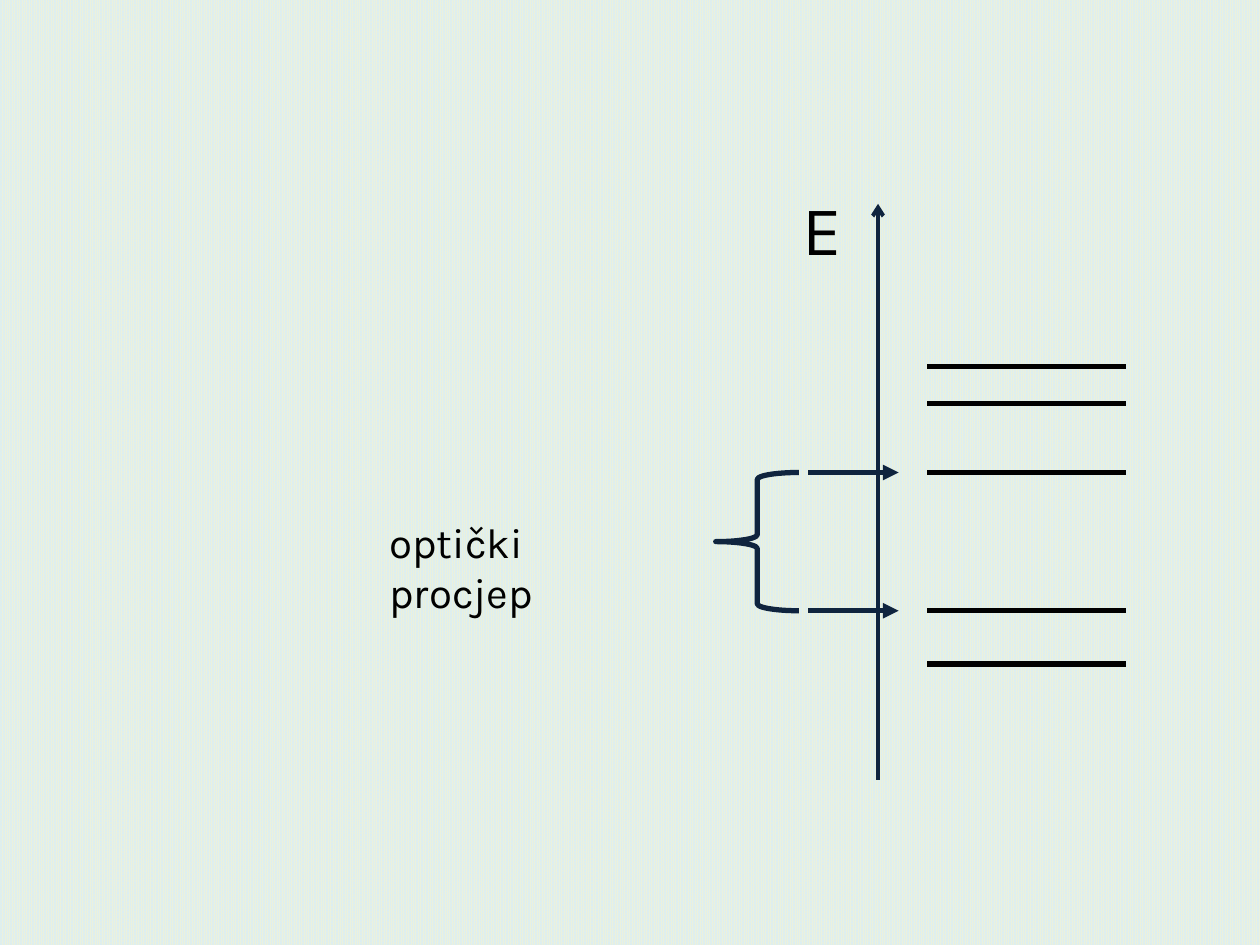
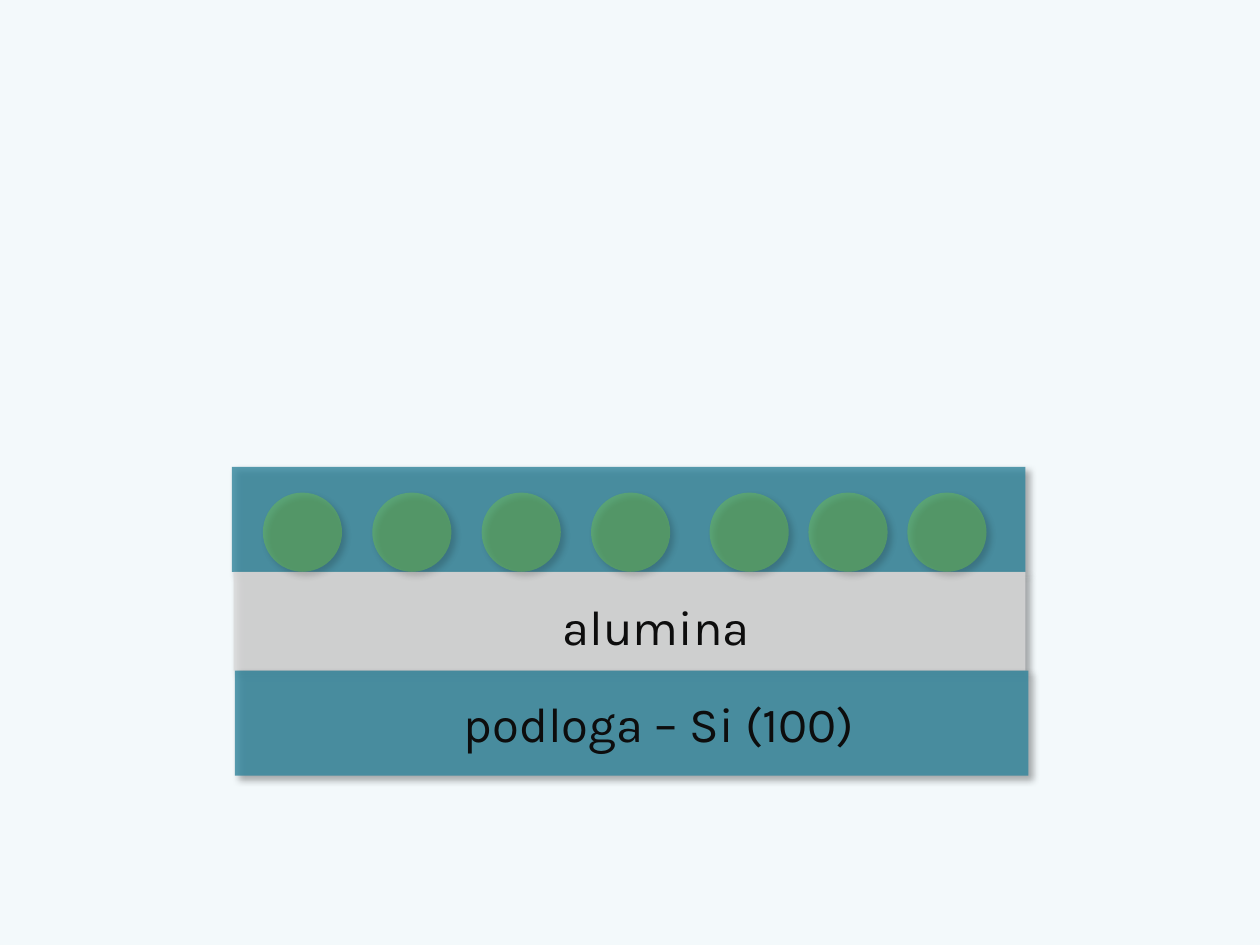
import pptx
import pptx.util
import pptx.dml.color
import pptx.enum.dml
import pptx.enum.shapes
import pptx.enum.text
import pptx.oxml.ns
import lxml.etree

Pt = pptx.util.Pt
qn = pptx.oxml.ns.qn
RGBColor = pptx.dml.color.RGBColor
MSO_SHAPE = pptx.enum.shapes.MSO_SHAPE

BLACK = RGBColor(0x00, 0x00, 0x00)
INK = RGBColor(0x0D, 0x0D, 0x0D)
NAVY = RGBColor(0x0F, 0x24, 0x3E)
CREAM = RGBColor(0xEB, 0xF1, 0xDE)
PALE_BLUE = RGBColor(0xDB, 0xEE, 0xF4)
SKY = RGBColor(0xB7, 0xDE, 0xE8)
TEAL = RGBColor(0x31, 0x85, 0x9C)
GREY = RGBColor(0xD9, 0xD9, 0xD9)
GREEN = RGBColor(0x72, 0xC3, 0x45)


class Deck:
    font = "Karla"

    def __init__(self, prs):
        self.prs = prs
        self.s = None

    def slide(self):
        self.s = self.prs.slides.add_slide(self.prs.slide_layouts[6])

    def sub(self, parent, tag, **attrs):
        return lxml.etree.SubElement(parent, qn(tag), attrs)

    def opacity(self, element, percent):
        color = next(element.iter(qn("a:srgbClr")))
        self.sub(color, "a:alpha", val=str(percent * 1000))

    def pattern_background(self, fore, back):
        fill = self.s.background.fill
        fill.patterned()
        fill.pattern = pptx.enum.dml.MSO_PATTERN.PERCENT_90
        fill.fore_color.rgb = fore
        fill.back_color.rgb = back

    def tint_background(self, color, percent):
        fill = self.s.background.fill
        fill.solid()
        fill.fore_color.rgb = color
        self.opacity(self.s.element, percent)

    def line(self, x1, y1, x2, y2, color, width=3, arrow=None):
        cxn = self.s.shapes.add_connector(
            pptx.enum.shapes.MSO_CONNECTOR.STRAIGHT, Pt(x1), Pt(y1), Pt(x2), Pt(y2))
        cxn.line.color.rgb = color
        cxn.line.width = Pt(width)
        sppr = cxn.element.spPr
        if arrow:
            self.sub(sppr.find(qn("a:ln")), "a:tailEnd", type=arrow)
        self.sub(sppr, "a:effectLst")

    def brace(self, x, y, w, h, color, width=3):
        sp = self.s.shapes.add_shape(MSO_SHAPE.LEFT_BRACE, Pt(x), Pt(y), Pt(w), Pt(h))
        sp.shadow.inherit = False
        sp.fill.background()
        sp.line.color.rgb = color
        sp.line.width = Pt(width)

    def block(self, kind, x, y, w, h, color, percent):
        sp = self.s.shapes.add_shape(kind, Pt(x), Pt(y), Pt(w), Pt(h))
        sp.fill.solid()
        sp.fill.fore_color.rgb = color
        sp.line.fill.background()
        sp.shadow.inherit = False
        sppr = sp.element.spPr
        self.opacity(sppr, percent)
        shadow = self.sub(sppr.find(qn("a:effectLst")), "a:outerShdw",
                          blurRad=str(Pt(4)), dist=str(Pt(3)), dir="2700000",
                          algn="tl", rotWithShape="0")
        self.sub(shadow, "a:srgbClr", val=str(BLACK))
        self.opacity(shadow, 40)

    def text(self, x, y, w, h, text, size, color):
        tf = self.s.shapes.add_textbox(Pt(x), Pt(y), Pt(w), Pt(h)).text_frame
        tf.word_wrap = True
        tf.auto_size = pptx.enum.text.MSO_AUTO_SIZE.SHAPE_TO_FIT_TEXT
        r = tf.paragraphs[0].add_run()
        r.text = text
        r.font.name = self.font
        r.font.size = Pt(size)
        r.font.color.rgb = color


def energy_levels(deck):
    deck.slide()
    deck.pattern_background(CREAM, PALE_BLUE)
    gap_top, gap_bottom = 270, 349
    for y in (209.5, 230.5, gap_top, gap_bottom, 379.5):
        deck.line(530, y, 643.5, y, BLACK)
    for y in (gap_top, gap_bottom):
        deck.line(462, y, 513.5, y, NAVY, arrow="triangle")
    deck.text(215.5, 291.5, 163.5, 36, "optički procjep", 24, BLACK)
    deck.brace(409, gap_top, 47.5, gap_bottom - gap_top, NAVY)
    deck.line(501.75, 445.5, 501.75, 116.5, NAVY, 2.25, "arrow")
    deck.text(451.5, 102.5, 34.5, 55.5, "E", 40, BLACK)


def layer_stack(deck):
    deck.slide()
    deck.tint_background(SKY, 16)
    layers = [
        (132.5, 266.75, 453.5, 60, TEAL, 80),
        (133.5, 326.75, 452.5, 56.5, GREY, 81),
        (134.25, 383.25, 453.5, 60, TEAL, 80),
    ]
    for layer in layers:
        deck.block(MSO_SHAPE.RECTANGLE, *layer)
    deck.text(314.5, 337.5, 258, 41, "alumina", 28, INK)
    deck.text(258, 393, 260.5, 41, "podloga – Si (100)", 28, INK)
    for start, pitch, count in ((150.25, 62.5, 4), (405.5, 56.5, 3)):
        for i in range(count):
            deck.block(MSO_SHAPE.OVAL, start + i * pitch, 281.5, 45.25, 45.25, GREEN, 44)


def main():
    prs = pptx.Presentation()
    prs.slide_width, prs.slide_height = Pt(720), Pt(540)
    deck = Deck(prs)
    energy_levels(deck)
    layer_stack(deck)
    prs.save("out.pptx")


if __name__ == "__main__":
    main()
